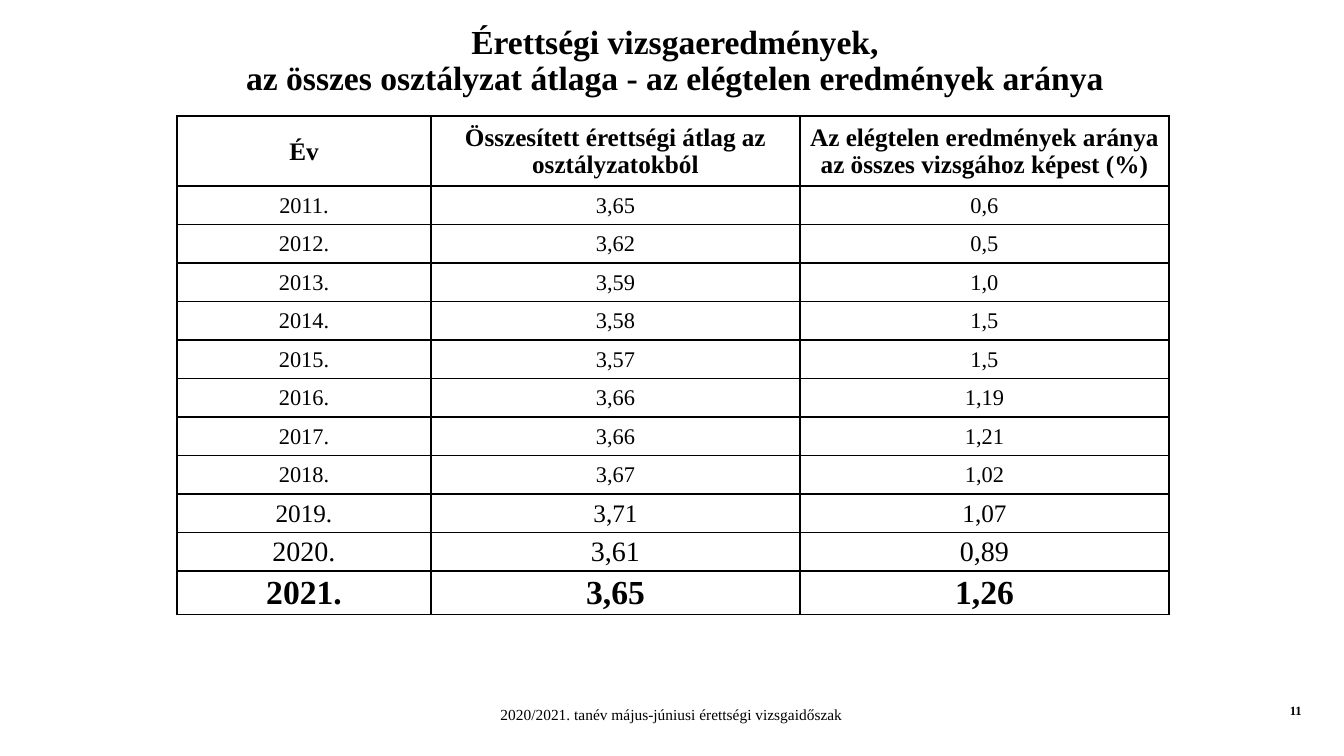
from lxml.etree import SubElement
from pptx import Presentation
from pptx.dml.color import RGBColor
from pptx.enum.text import MSO_ANCHOR as Anchor, PP_ALIGN as Align
from pptx.oxml.ns import qn
from pptx.util import Emu, Pt

TITLE = ["Érettségi vizsgaeredmények,",
         "az összes osztályzat átlaga - az elégtelen eredmények aránya"]
HEADINGS = ("Év", "Összesített érettségi átlag az osztályzatokból",
            "Az elégtelen eredmények aránya az összes vizsgához képest (%)")
RESULTS = [
    ("2011.", "3,65", "0,6"),
    ("2012.", "3,62", "0,5"),
    ("2013.", "3,59", "1,0"),
    ("2014.", "3,58", "1,5"),
    ("2015.", "3,57", "1,5"),
    ("2016.", "3,66", "1,19"),
    ("2017.", "3,66", "1,21"),
    ("2018.", "3,67", "1,02"),
    ("2019.", "3,71", "1,07"),
    ("2020.", "3,61", "0,89"),
    ("2021.", "3,65", "1,26"),
]
LATEST_SIZES = {"2019.": 18, "2020.": 20, "2021.": 24}
FOOTER = "2020/2021. tanév május-júniusi érettségi vizsgaidőszak"
PAGE_NUMBER = "11"

FONT = "Times New Roman"
BLACK = RGBColor(0, 0, 0)
PX = 914400 / 100.8
COLUMN_WIDTHS = (254, 369, 369)
HEADING_HEIGHT, YEARS_HEIGHT, LAST_HEIGHT = 70, 385, 44


def px(length):
    """Turn pixels into EMU."""
    return Emu(round(length * PX))


def write(para, text, size, bold=False, align=Align.CENTER):
    """Add one formatted run to a paragraph."""
    para.alignment = align
    span = para.add_run()
    span.text = text
    span.font.name = FONT
    span.font.size = Pt(size)
    span.font.bold = bold
    span.font.color.rgb = BLACK


def add_title(page):
    """Place the two-line title."""
    box = page.shapes.title
    box.left, box.top, box.width, box.height = map(px, (80, 20, 1190, 59))
    frame = box.text_frame
    frame.word_wrap = True
    frame.vertical_anchor = Anchor.TOP
    for index, line in enumerate(TITLE):
        para = frame.add_paragraph() if index else frame.paragraphs[0]
        para.line_spacing = 0.9
        write(para, line, 24, True)


def add_label(page, place, text, size, bold, align, wrap):
    """Add a one-line text box."""
    frame = page.shapes.add_textbox(*map(px, place)).text_frame
    frame.word_wrap = wrap
    write(frame.paragraphs[0], text, size, bold, align)


def format_cell(cell):
    """Give a cell black borders, thin margins and no fill."""
    cell.vertical_anchor = Anchor.MIDDLE
    cell.margin_left = cell.margin_top = cell.margin_right = px(1)
    cell.margin_bottom = 0
    properties = cell._tc.get_or_add_tcPr()
    for side in ("a:lnL", "a:lnR", "a:lnT", "a:lnB"):
        line = SubElement(properties, qn(side), w=str(Pt(1)))
        SubElement(SubElement(line, qn("a:solidFill")), qn("a:srgbClr"), val=str(BLACK))
    cell.fill.background()


def add_results(page):
    """Build the table of yearly results."""
    rows = [HEADINGS] + RESULTS
    year_height = YEARS_HEIGHT / (len(RESULTS) - 1)
    heights = [HEADING_HEIGHT] + [year_height] * (len(RESULTS) - 1) + [LAST_HEIGHT]
    place = (177, 116, sum(COLUMN_WIDTHS), sum(heights))
    table = page.shapes.add_table(len(rows), len(HEADINGS), *map(px, place)).table
    table.horz_banding = False
    for column, width in zip(table.columns, COLUMN_WIDTHS):
        column.width = px(width)
    for row, height, values in zip(table.rows, heights, rows):
        row.height = px(height)
        size = 18 if values is HEADINGS else LATEST_SIZES.get(values[0], 16)
        bold = values in (HEADINGS, RESULTS[-1])
        for cell, value in zip(row.cells, values):
            format_cell(cell)
            write(cell.text_frame.paragraphs[0], value, size, bold)


def main():
    """Build and save the slide."""
    deck = Presentation()
    deck.slide_width, deck.slide_height = px(1344), px(756)
    page = deck.slides.add_slide(deck.slide_layouts[5])
    add_title(page)
    add_results(page)
    add_label(page, (362, 700, 619, 29), FOOTER, 11, False, Align.CENTER, True)
    add_label(page, (1280, 698, 33, 25), PAGE_NUMBER, 9, True, Align.LEFT, False)
    deck.save("out.pptx")


if __name__ == "__main__":
    main()
